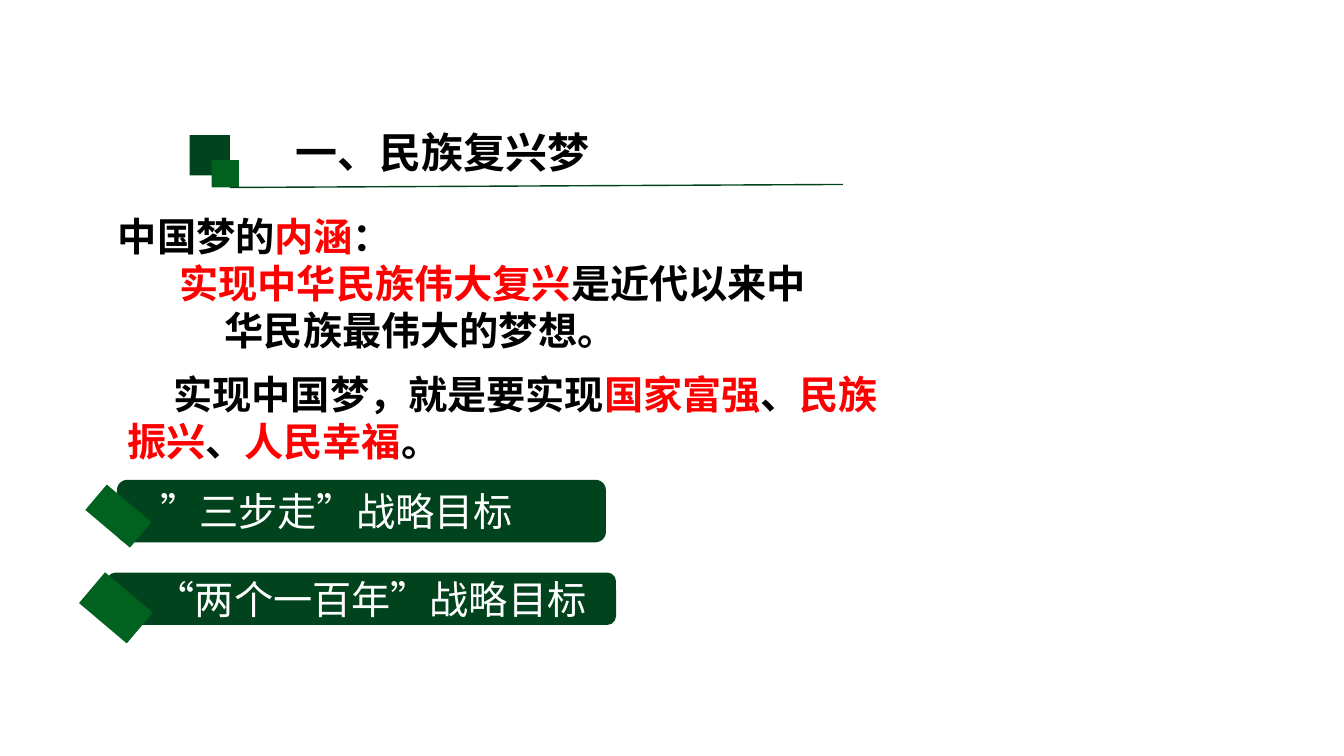
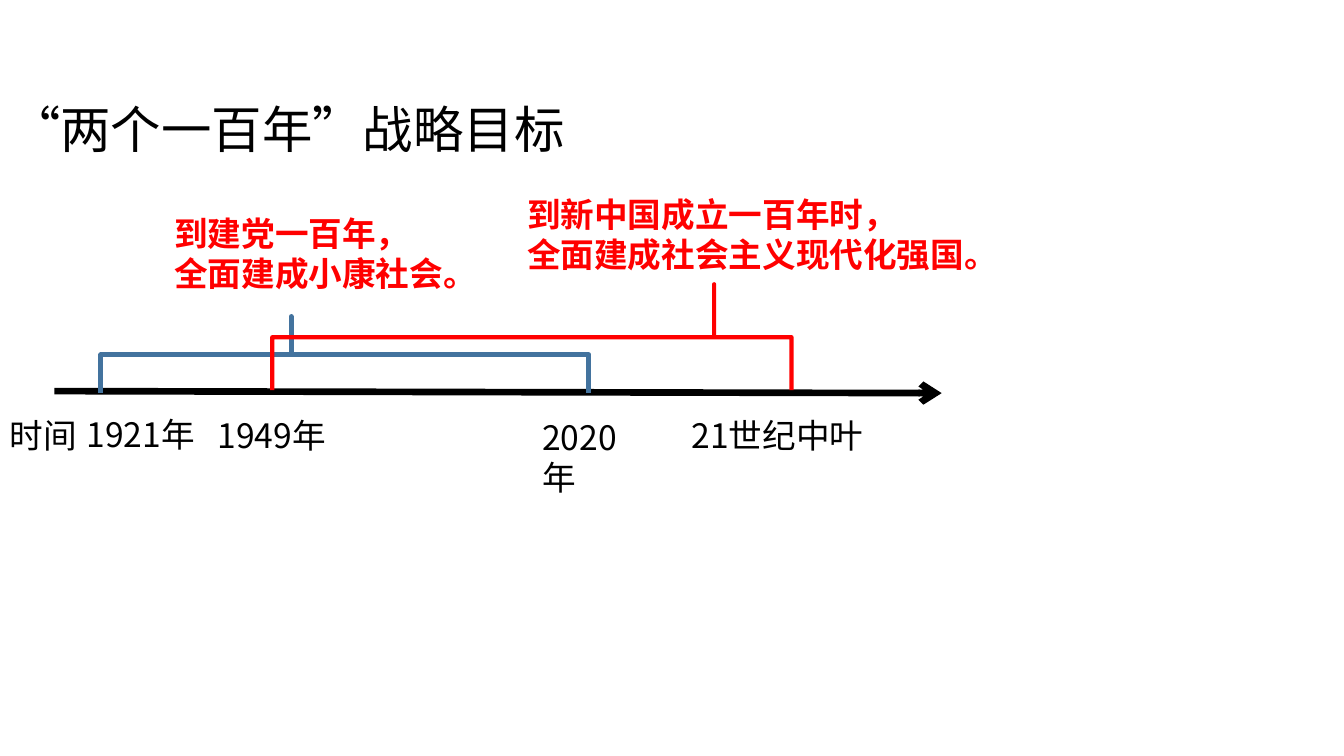
from dataclasses import dataclass

from lxml import etree
from pptx import Presentation
from pptx.dml.color import RGBColor
from pptx.enum.lang import MSO_LANGUAGE_ID
from pptx.enum.shapes import MSO_CONNECTOR, MSO_SHAPE
from pptx.enum.text import MSO_ANCHOR, MSO_AUTO_SIZE, PP_ALIGN
from pptx.oxml.ns import qn
from pptx.util import Inches, Pt

RECTANGLE = MSO_SHAPE.RECTANGLE
ROUNDED = MSO_SHAPE.ROUNDED_RECTANGLE
LEFT_BRACE = MSO_SHAPE.LEFT_BRACE
STRAIGHT = MSO_CONNECTOR.STRAIGHT
TOP, MIDDLE = MSO_ANCHOR.TOP, MSO_ANCHOR.MIDDLE
LEFT = PP_ALIGN.LEFT
NO_AUTOFIT = MSO_AUTO_SIZE.NONE
CHINESE = MSO_LANGUAGE_ID.SIMPLIFIED_CHINESE


@dataclass(frozen=True)
class Theme:
    font: str = "Noto Sans CJK SC"
    black: RGBColor = RGBColor(0x00, 0x00, 0x00)
    white: RGBColor = RGBColor(0xFF, 0xFF, 0xFF)
    red: RGBColor = RGBColor(0xFF, 0x00, 0x00)
    dark_green: RGBColor = RGBColor(0x01, 0x43, 0x1D)
    green: RGBColor = RGBColor(0x01, 0x62, 0x1F)
    blue: RGBColor = RGBColor(0x43, 0x73, 0x9E)
    section_size: float = 30
    title_size: float = 36
    body_size: float = 28
    label_size: float = 24
    body_pitch: float = 33.6
    label_pitch: float = 28.6


theme = Theme()


def add_run(para, text, size, color, bold=False):
    run = para.add_run()
    run.text = text
    font = run.font
    font.name = theme.font
    font.size = Pt(size)
    font.bold = bold
    font.color.rgb = color
    font.language_id = CHINESE
    east_asian = etree.Element(qn("a:ea"), typeface=theme.font)
    font._element.find(qn("a:latin")).addnext(east_asian)


def place(box, at, anchor=TOP):
    box.left, box.top, box.width, box.height = [Inches(length) for length in at]
    frame = box.text_frame
    frame.word_wrap = True
    frame.auto_size = NO_AUTOFIT
    frame.vertical_anchor = anchor
    frame.paragraphs[0].alignment = LEFT
    return frame


deck = Presentation()
deck.slide_width, deck.slide_height = Inches(13.33), Inches(7.5)

dream_page = deck.slides.add_slide(deck.slide_layouts[1])
timeline_page = deck.slides.add_slide(deck.slide_layouts[5])

titles = [
    (dream_page, "一、民族复兴梦", (2.83, 1.17, 5.8, 0.67), theme.section_size, True),
    (timeline_page, "“两个一百年”战略目标", (0, 0.8, 6.58, 0.95), theme.title_size, False),
]
for page, text, at, size, bold in titles:
    frame = place(page.shapes.title, at, MIDDLE)
    add_run(frame.paragraphs[0], text, size, theme.black, bold)

body_frame = place(dream_page.placeholders[1], (1.07, 2.06, 10.25, 2.7))
body_paragraphs = [
    (0, 0, 0, [[("中国梦的", theme.black), ("内涵", theme.red), ("：", theme.black)]]),
    (1.06, -0.45, 0, [
        [("实现中华民族伟大复兴", theme.red), ("是近代以来中", theme.black)],
        [("华民族最伟大的梦想。", theme.black)],
    ]),
    (0.09, 0.46, 12, [
        [("实现中国梦，就是要实现", theme.black), ("国家富强", theme.red),
         ("、", theme.black), ("民族", theme.red)],
        [("振兴", theme.red), ("、", theme.black), ("人民幸福", theme.red), ("。", theme.black)],
    ]),
]
for index, (margin, indent, space, lines) in enumerate(body_paragraphs):
    para = body_frame.add_paragraph() if index else body_frame.paragraphs[0]
    properties = para._p.get_or_add_pPr()
    properties.set("marL", str(Inches(margin)))
    properties.set("indent", str(Inches(indent)))
    etree.SubElement(properties, qn("a:buNone"))
    para.alignment = LEFT
    para.space_before = Pt(space)
    para.line_spacing = Pt(theme.body_pitch)
    for line_index, spans in enumerate(lines):
        if line_index:
            para.add_line_break()
        for text, color in spans:
            add_run(para, text, theme.body_size, color, True)

green_shapes = [
    (RECTANGLE, (1.88, 1.34, 0.4, 0.4), 0, theme.dark_green, "", 0),
    (RECTANGLE, (2.1, 1.59, 0.27, 0.27), 0, theme.green, "", 0),
    (ROUNDED, (1.16, 4.76, 4.85, 0.62), 0, theme.dark_green, "”三步走”战略目标", 0.4),
    (RECTANGLE, (1.01, 4.83, 0.33, 0.58), 310.2, theme.green, "", 0),
    (ROUNDED, (1.06, 5.68, 5.05, 0.52), 0, theme.dark_green, "“两个一百年”战略目标", 0.46),
    (RECTANGLE, (0.95, 5.72, 0.4, 0.62), 310.2, theme.green, "", 0),
]
for kind, at, rotation, color, text, inset in green_shapes:
    shape = dream_page.shapes.add_shape(kind, *[Inches(length) for length in at])
    shape.shadow.inherit = False
    shape.rotation = rotation
    shape.fill.solid()
    shape.fill.fore_color.rgb = color
    shape.line.fill.background()
    if text:
        frame = place(shape, at, MIDDLE)
        frame.margin_left = Inches(inset)
        frame.margin_top = frame.margin_bottom = 0
        add_run(frame.paragraphs[0], text, theme.body_size, theme.white)

rules = [
    (dream_page, (2.28, 1.86, 8.36, 1.83), theme.dark_green, 1, False),
    (timeline_page, (0.54, 3.88, 9.34, 3.9), theme.black, 4.75, True),
]
for page, ends, color, width, has_arrow in rules:
    rule = page.shapes.add_connector(STRAIGHT, *[Inches(length) for length in ends])
    rule.line.color.rgb = color
    rule.line.width = Pt(width)
    if has_arrow:
        etree.SubElement(rule.line._get_or_add_ln(), qn("a:tailEnd"), type="arrow")
    etree.SubElement(rule._element.spPr, qn("a:effectLst"))

braces = [
    ((3.04, 1.1, 0.76, 4.84), 0.61, theme.blue, 3.5),
    ((4.75, 0.77, 1.05, 5.15), 0.149, theme.red, 3),
]
for at, point, color, width in braces:
    brace = timeline_page.shapes.add_shape(LEFT_BRACE, *[Inches(length) for length in at])
    brace.shadow.inherit = False
    brace.rotation = 90
    brace.adjustments[0] = 0
    brace.adjustments[1] = point
    brace.fill.background()
    brace.line.color.rgb = color
    brace.line.width = Pt(width)

labels = [
    (["时间"], (0, 4.07, 1.27, 0.5), theme.black),
    (["1921年"], (0.76, 4.06, 1.3, 0.9), theme.black),
    (["1949年"], (2.06, 4.07, 1.43, 0.59), theme.black),
    (["2020年"], (5.28, 4.09, 1.21, 0.9), theme.black),
    (["21世纪中叶"], (6.76, 4.07, 2.19, 0.58), theme.black),
    (["到建党一百年，", "全面建成小康社会。"], (1.63, 2.07, 3.54, 0.9), theme.red),
    (["到新中国成立一百年时，", "全面建成社会主义现代化强国。"], (5.13, 1.88, 7.21, 0.9), theme.red),
]
for lines, at, color in labels:
    box = timeline_page.shapes.add_textbox(*[Inches(length) for length in at])
    frame = place(box, at)
    for index, text in enumerate(lines):
        para = frame.add_paragraph() if index else frame.paragraphs[0]
        para.line_spacing = Pt(theme.label_pitch)
        add_run(para, text, theme.label_size, color, color == theme.red)

deck.save("out.pptx")
